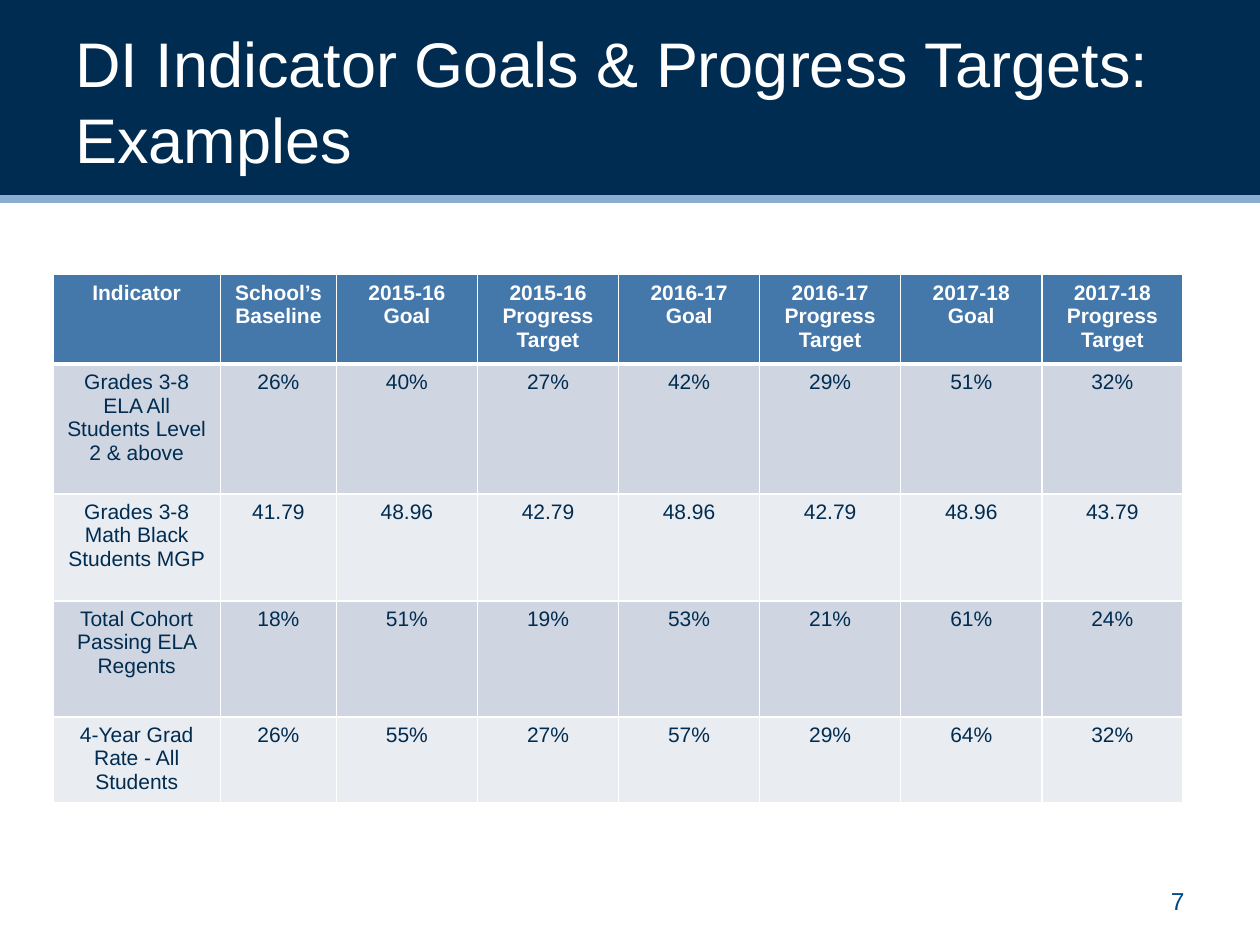
from dataclasses import dataclass

from lxml import etree
from pptx import Presentation
from pptx.dml.color import RGBColor
from pptx.enum.shapes import MSO_CONNECTOR, MSO_SHAPE
from pptx.enum.text import MSO_ANCHOR, PP_ALIGN
from pptx.oxml.ns import qn
from pptx.util import Inches, Pt

RECTANGLE = MSO_SHAPE.RECTANGLE
STRAIGHT = MSO_CONNECTOR.STRAIGHT
MIDDLE = MSO_ANCHOR.MIDDLE
LEFT, CENTER, RIGHT = PP_ALIGN.LEFT, PP_ALIGN.CENTER, PP_ALIGN.RIGHT

FONT = "Arial"
NAVY, WHITE = "002C51", "FFFFFF"
HEADER_FILL = "4477AA"
BAND_FILLS = ("CFD6E2", "E9ECF1")

SLIDE_WIDTH, SLIDE_HEIGHT = Inches(10), Inches(7.5)
BANNER_HEIGHT = Inches(1.58)
COLUMN_WIDTHS = [1.33, 0.92] + [1.12] * 6
ROW_HEIGHTS = [0.71, 1.03, 0.85, 0.92, 0.68]

YEARS = ("2015-16", "2016-17", "2017-18")
HEADERS = ["Indicator", "School’s Baseline"] + [
    f"{year} {measure}" for year in YEARS for measure in ("Goal", "Progress Target")
]
INDICATORS = [
    ["Grades 3-8 ELA All Students Level 2 & above",
     "26%", "40%", "27%", "42%", "29%", "51%", "32%"],
    ["Grades 3-8 Math Black Students MGP",
     "41.79", "48.96", "42.79", "48.96", "42.79", "48.96", "43.79"],
    ["Total Cohort Passing ELA Regents",
     "18%", "51%", "19%", "53%", "21%", "61%", "24%"],
    ["4-Year Grad Rate - All Students",
     "26%", "55%", "27%", "57%", "29%", "64%", "32%"],
]


@dataclass
class Label:
    text: str
    left: float
    top: float
    width: float
    height: float
    size: int
    color: str
    align: PP_ALIGN


LABELS = [
    Label("7", 7.17, 6.95, 2.33, 0.4, 14, "004884", RIGHT),
    Label("DI Indicator Goals & Progress Targets: Examples",
          0.5, 0.17, 9, 1.25, 36, WHITE, LEFT),
]


def rgb(color: str) -> RGBColor:
    return RGBColor.from_string(color)


def style_paragraph(paragraph, size: int, color: str, align, bold: bool = False) -> None:
    paragraph.alignment = align
    font = paragraph.font
    font.name, font.size, font.bold = FONT, Pt(size), bold
    font.color.rgb = rgb(color)


def add_label(slide, label: Label) -> None:
    box = slide.shapes.add_textbox(
        Inches(label.left), Inches(label.top), Inches(label.width), Inches(label.height))
    frame = box.text_frame
    frame.word_wrap = True
    frame.vertical_anchor = MIDDLE
    frame.text = label.text
    style_paragraph(frame.paragraphs[0], label.size, label.color, label.align)


def add_banner(slide) -> None:
    banner = slide.shapes.add_shape(RECTANGLE, 0, 0, SLIDE_WIDTH, BANNER_HEIGHT)
    banner.shadow.inherit = False
    banner.fill.solid()
    banner.fill.fore_color.rgb = rgb(NAVY)
    banner.line.fill.background()

    rule = slide.shapes.add_connector(STRAIGHT, 0, BANNER_HEIGHT, SLIDE_WIDTH, BANNER_HEIGHT)
    rule.line.color.rgb = rgb("8AADD0")
    rule.line.width = Pt(4.5)
    etree.SubElement(rule._element.spPr, qn("a:effectLst"))


def set_borders(cell, bottom: int) -> None:
    properties = cell._tc.get_or_add_tcPr()
    widths = {"a:lnL": 1, "a:lnR": 1, "a:lnT": 1, "a:lnB": bottom}
    # Borders come before the fill in the cell properties
    for position, (tag, width) in enumerate(widths.items()):
        border = etree.Element(qn(tag), w=str(Pt(width)))
        fill = etree.SubElement(border, qn("a:solidFill"))
        etree.SubElement(fill, qn("a:srgbClr"), val=WHITE)
        properties.insert(position, border)


def add_indicator_table(slide) -> None:
    rows = [HEADERS] + INDICATORS
    table = slide.shapes.add_table(
        len(rows), len(HEADERS), Inches(0.42), Inches(2.18),
        Inches(sum(COLUMN_WIDTHS)), Inches(sum(ROW_HEIGHTS))).table
    for column, width in zip(table.columns, COLUMN_WIDTHS):
        column.width = Inches(width)
    for row, height in zip(table.rows, ROW_HEIGHTS):
        row.height = Inches(height)
    for row_index, texts in enumerate(rows):
        is_header = row_index == 0
        fill = HEADER_FILL if is_header else BAND_FILLS[(row_index - 1) % 2]
        for column_index, text in enumerate(texts):
            cell = table.cell(row_index, column_index)
            cell.text = text
            cell.fill.solid()
            cell.fill.fore_color.rgb = rgb(fill)
            style_paragraph(cell.text_frame.paragraphs[0], 12,
                            WHITE if is_header else NAVY, CENTER, bold=is_header)
            # The header is set off by a thicker rule, shared with the row below
            set_borders(cell, bottom=3 if is_header else 1)
            if row_index == 1:
                cell._tc.tcPr.find(qn("a:lnT")).set("w", str(Pt(3)))


def main() -> None:
    presentation = Presentation()
    presentation.slide_width, presentation.slide_height = SLIDE_WIDTH, SLIDE_HEIGHT
    slide = presentation.slides.add_slide(presentation.slide_layouts[6])
    add_banner(slide)
    add_indicator_table(slide)
    # Slide number and title
    for label in LABELS:
        add_label(slide, label)
    presentation.save("out.pptx")


if __name__ == "__main__":
    main()
